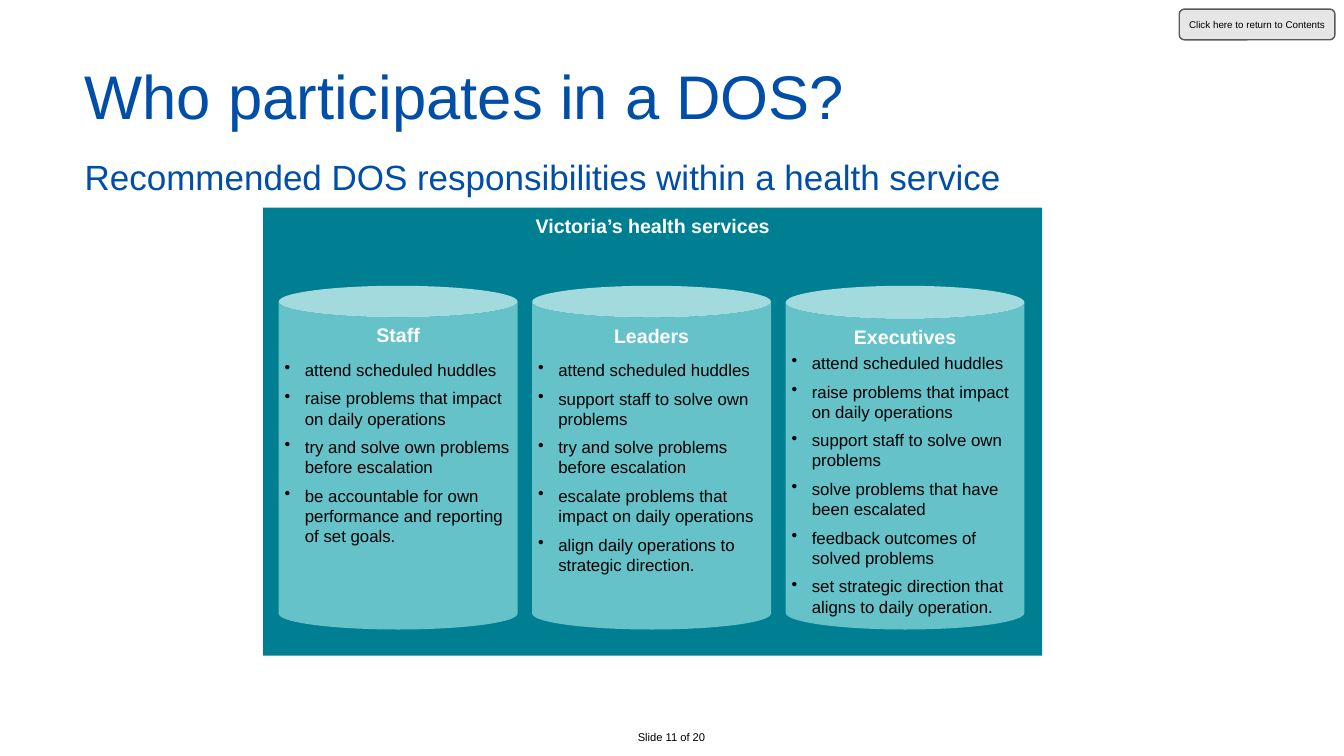
import pptx
import pptx.util
import pptx.dml.color
import pptx.enum.shapes
import pptx.enum.text
import pptx.oxml.ns
import lxml.etree

Inches = pptx.util.Inches
Pt = pptx.util.Pt
RGBColor = pptx.dml.color.RGBColor
SHAPE = pptx.enum.shapes.MSO_SHAPE
ALIGN = pptx.enum.text.PP_ALIGN
ANCHOR = pptx.enum.text.MSO_ANCHOR

BLUE = RGBColor(0x00, 0x4E, 0xA8)
TEAL = RGBColor(0x00, 0x7F, 0x92)
AQUA = RGBColor(0x64, 0xC2, 0xC8)
GREY = RGBColor(0xE6, 0xE6, 0xE6)
DARK = RGBColor(0x59, 0x59, 0x59)
BLACK = RGBColor(0, 0, 0)
WHITE = RGBColor(0xFF, 0xFF, 0xFF)

deck = pptx.Presentation()
deck.slide_width = Inches(26.67)
deck.slide_height = Inches(15)
slide = deck.slides.add_slide(deck.slide_layouts[6])


def write(frame, text, size, color, bold=False, align=ALIGN.LEFT,
          after=0, line=None, bullet=False):
    para = frame.paragraphs[0]
    if para.runs:
        para = frame.add_paragraph()
    if bullet:
        props = para._p.get_or_add_pPr()
        props.set("marL", str(Inches(0.4)))
        props.set("indent", str(Inches(-0.4)))
        mark = lxml.etree.SubElement(props, pptx.oxml.ns.qn("a:buChar"))
        mark.set("char", "•")
    para.alignment = align
    para.space_after = Pt(after)
    if line:
        para.line_spacing = Pt(line)
    run = para.add_run()
    run.text = text
    run.font.name = "Arial"
    run.font.size = Pt(size)
    run.font.bold = bold
    run.font.color.rgb = color


def place(kind, box, fill=None, side=0, edge=0, anchor=ANCHOR.TOP):
    area = [Inches(n) for n in box]
    if kind is None:
        shape = slide.shapes.add_textbox(*area)
    else:
        shape = slide.shapes.add_shape(kind, *area)
        shape.shadow.inherit = False
        shape.fill.solid()
        shape.fill.fore_color.rgb = fill
        shape.line.fill.background()
    frame = shape.text_frame
    frame.word_wrap = True
    frame.vertical_anchor = anchor
    frame.margin_left = frame.margin_right = Inches(side)
    frame.margin_top = frame.margin_bottom = Inches(edge)
    return shape


footer = place(None, (11.63, 14.45, 3.39, 0.37), side=0.1, edge=0.05)
write(footer.text_frame, "Slide 11 of 20", 16, BLACK, align=ALIGN.CENTER)

title = place(None, (1.68, 1.23, 24.26, 1.27), anchor=ANCHOR.MIDDLE)
write(title.text_frame, "Who participates in a DOS?", 88, BLUE, line=108)

lead = place(None, (1.68, 3.25, 22.84, 0.81))
write(lead.text_frame, "Recommended DOS responsibilities within a health service",
      50, BLUE, after=11.3, line=48)

panel = place(SHAPE.RECTANGLE, (5.22, 4.12, 15.46, 8.89), TEAL, edge=0.12)
write(panel.text_frame, "Victoria’s health services", 28, WHITE,
      bold=True, align=ALIGN.CENTER, after=18)

roles = [
    ("Staff", 0.132, 18, [
        "attend scheduled huddles",
        "raise problems that impact on daily operations",
        "try and solve own problems before escalation",
        "be accountable for own performance and reporting of set goals.",
    ]),
    ("Leaders", 0.133, 18, [
        "attend scheduled huddles",
        "support staff to solve own problems",
        "try and solve problems before escalation",
        "escalate problems that impact on daily operations",
        "align daily operations to strategic direction.",
    ]),
    ("Executives", 0.139, 6, [
        "attend scheduled huddles",
        "raise problems that impact on daily operations",
        "support staff to solve own problems",
        "solve problems that have been escalated",
        "feedback outcomes of solved problems",
        "set strategic direction that aligns to daily operation.",
    ]),
]

for col, (role, lid, gap, tasks) in enumerate(roles):
    can = place(SHAPE.CAN, (5.53 + 5.03 * col, 5.67, 4.74, 6.82), AQUA,
                side=0.12, edge=0.12)
    can.adjustments[0] = lid
    write(can.text_frame, role, 28, WHITE, bold=True,
          align=ALIGN.CENTER, after=gap)
    for task in tasks:
        write(can.text_frame, task, 24, BLACK, after=12, bullet=True)

button = place(SHAPE.ROUNDED_RECTANGLE, (23.4, 0.18, 3.09, 0.61), GREY,
               anchor=ANCHOR.MIDDLE)
button.line.color.rgb = DARK
button.line.width = Pt(2)
write(button.text_frame, "Click here to return to Contents", 14, BLACK,
      align=ALIGN.CENTER)

deck.save("out.pptx")
